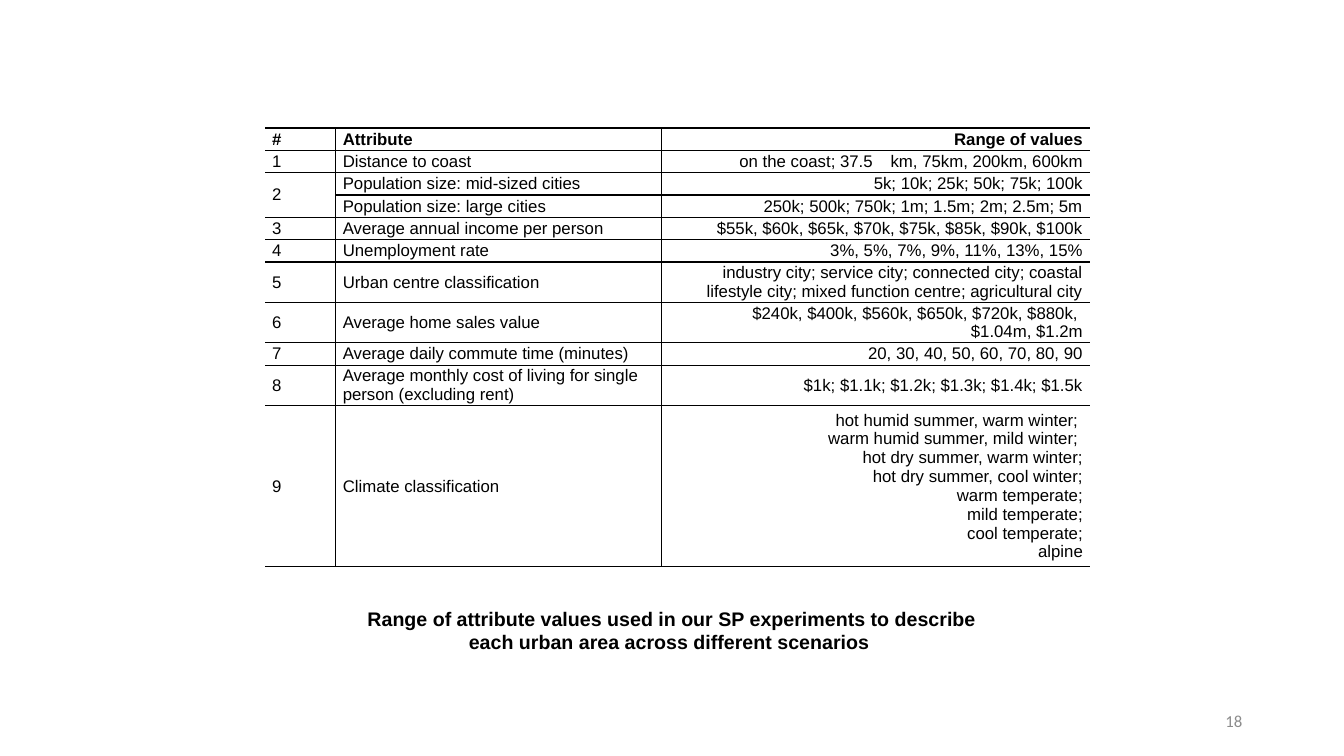
from dataclasses import dataclass

from lxml.etree import SubElement
from pptx import Presentation
from pptx.dml.color import RGBColor
from pptx.enum.text import MSO_ANCHOR, MSO_AUTO_SIZE, PP_ALIGN
from pptx.oxml.ns import qn
from pptx.util import Inches, Pt


@dataclass(frozen=True)
class Theme:
    ink: str = "000000"
    muted: str = "8C8C8C"
    body_font: str = "Arial"
    number_font: str = "Calibri"
    body_size: int = 12
    caption_size: int = 14
    rule_width: int = 1


THEME = Theme()
SLIDE_WIDTH, SLIDE_HEIGHT = Inches(13.333), Inches(7.5)

# Regions: left, top, width, height in percent of the slide
TABLE_BOX = (19.73, 16.93, 61.37, 55.7)
CAPTION_BOX = (25, 79.6, 50, 7.6)
NUMBER_BOX = (70.67, 92.67, 22.5, 5.33)

# Table grid: column weights, row heights in percent of the slide height
COLUMN_WEIGHTS = (70, 323, 425)
MIN_ROW, LINE_HEIGHT = 2.96, 2.49
CELL_INSET = Inches(0.07)

# Number, attribute, range of values, lines in the row
# An empty number continues the one above
ATTRIBUTES = [
    ("#", "Attribute", "Range of values", 1),
    ("1", "Distance to coast", "on the coast; 37.5\tkm, 75km, 200km, 600km", 1),
    ("2", "Population size: mid-sized cities", "5k; 10k; 25k; 50k; 75k; 100k", 1),
    ("", "Population size: large cities", "250k; 500k; 750k; 1m; 1.5m; 2m; 2.5m; 5m", 1),
    ("3", "Average annual income per person",
     "$55k, $60k, $65k, $70k, $75k, $85k, $90k, $100k", 1),
    ("4", "Unemployment rate", "3%, 5%, 7%, 9%, 11%, 13%, 15%", 1),
    ("5", "Urban centre classification",
     "industry city; service city; connected city; coastal lifestyle city; "
     "mixed function centre; agricultural city", 2),
    ("6", "Average home sales value",
     "$240k, $400k, $560k, $650k, $720k, $880k, \n$1.04m, $1.2m", 2),
    ("7", "Average daily commute time (minutes)", "20, 30, 40, 50, 60, 70, 80, 90", 1),
    ("8", "Average monthly cost of living for single person (excluding rent)",
     "$1k; $1.1k; $1.2k; $1.3k; $1.4k; $1.5k", 2),
    ("9", "Climate classification",
     "hot humid summer, warm winter; \nwarm humid summer, mild winter; \n"
     "hot dry summer, warm winter;\nhot dry summer, cool winter;\n"
     "warm temperate;\nmild temperate;\ncool temperate;\nalpine", 8),
]


def place(box):
    """Turn a box in percent into slide lengths."""
    left, top, width, height = box
    return (int(SLIDE_WIDTH * left / 100), int(SLIDE_HEIGHT * top / 100),
            int(SLIDE_WIDTH * width / 100), int(SLIDE_HEIGHT * height / 100))


def write(frame, text, size=THEME.body_size, font=THEME.body_font,
          color=THEME.ink, bold=False, align=PP_ALIGN.LEFT):
    """Fill a text frame, one paragraph for each line of text."""
    for index, line in enumerate(text.split("\n")):
        paragraph = frame.add_paragraph() if index else frame.paragraphs[0]
        paragraph.alignment = align
        run = paragraph.add_run()
        run.text = line
        run.font.size = Pt(size)
        run.font.name = font
        run.font.bold = bold
        run.font.color.rgb = RGBColor.from_string(color)


def rule_cell(cell, open_sides):
    """Draw the borders of a cell, except on its open sides."""
    properties = cell._tc.get_or_add_tcPr()
    for side in ("lnL", "lnR", "lnT", "lnB"):
        border = SubElement(properties, qn(f"a:{side}"), w=str(Pt(THEME.rule_width)))
        if side in open_sides:
            SubElement(border, qn("a:noFill"))
        else:
            fill = SubElement(border, qn("a:solidFill"))
            SubElement(fill, qn("a:srgbClr"), val=THEME.ink)


def add_attribute_table(slide, box):
    left, top, width, height = place(box)
    table = slide.shapes.add_table(
        len(ATTRIBUTES), len(COLUMN_WEIGHTS), left, top, width, height).table
    table.first_row = table.horz_banding = False

    # Grid
    for column, weight in zip(table.columns, COLUMN_WEIGHTS):
        column.width = int(width * weight / sum(COLUMN_WEIGHTS))
    for row, (*_, lines) in zip(table.rows, ATTRIBUTES):
        row.height = int(SLIDE_HEIGHT * max(MIN_ROW, LINE_HEIGHT * lines) / 100)

    # Cells
    last = len(COLUMN_WEIGHTS) - 1
    for r, (*entries, _) in enumerate(ATTRIBUTES):
        for c, entry in enumerate(entries):
            cell = table.cell(r, c)
            cell.margin_left = cell.margin_right = CELL_INSET
            cell.margin_top = cell.margin_bottom = 0
            cell.vertical_anchor = MSO_ANCHOR.MIDDLE
            rule_cell(cell, {0: ("lnL",), last: ("lnR",)}.get(c, ()))
            cell.fill.background()
            if entry:
                write(cell.text_frame, entry, bold=r == 0,
                      align=PP_ALIGN.RIGHT if c == last else PP_ALIGN.LEFT)
            else:
                table.cell(r - 1, c).merge(cell)


def add_caption(slide, box):
    caption = slide.shapes.title
    caption.left, caption.top, caption.width, caption.height = place(box)
    frame = caption.text_frame
    frame.word_wrap = True
    frame.auto_size = MSO_AUTO_SIZE.SHAPE_TO_FIT_TEXT
    frame.vertical_anchor = MSO_ANCHOR.TOP
    write(frame, "Range of attribute values used in our SP experiments to describe "
                 "each urban area across different scenarios ",
          size=THEME.caption_size, bold=True, align=PP_ALIGN.CENTER)


def add_page_number(slide, box):
    frame = slide.shapes.add_textbox(*place(box)).text_frame
    frame.word_wrap = True
    frame.vertical_anchor = MSO_ANCHOR.MIDDLE
    write(frame, "18", font=THEME.number_font, color=THEME.muted,
          align=PP_ALIGN.RIGHT)


def main():
    deck = Presentation()
    deck.slide_width, deck.slide_height = SLIDE_WIDTH, SLIDE_HEIGHT
    slide = deck.slides.add_slide(deck.slide_layouts.get_by_name("Title Only"))
    add_attribute_table(slide, TABLE_BOX)
    add_caption(slide, CAPTION_BOX)
    add_page_number(slide, NUMBER_BOX)
    deck.save("out.pptx")


if __name__ == "__main__":
    main()
